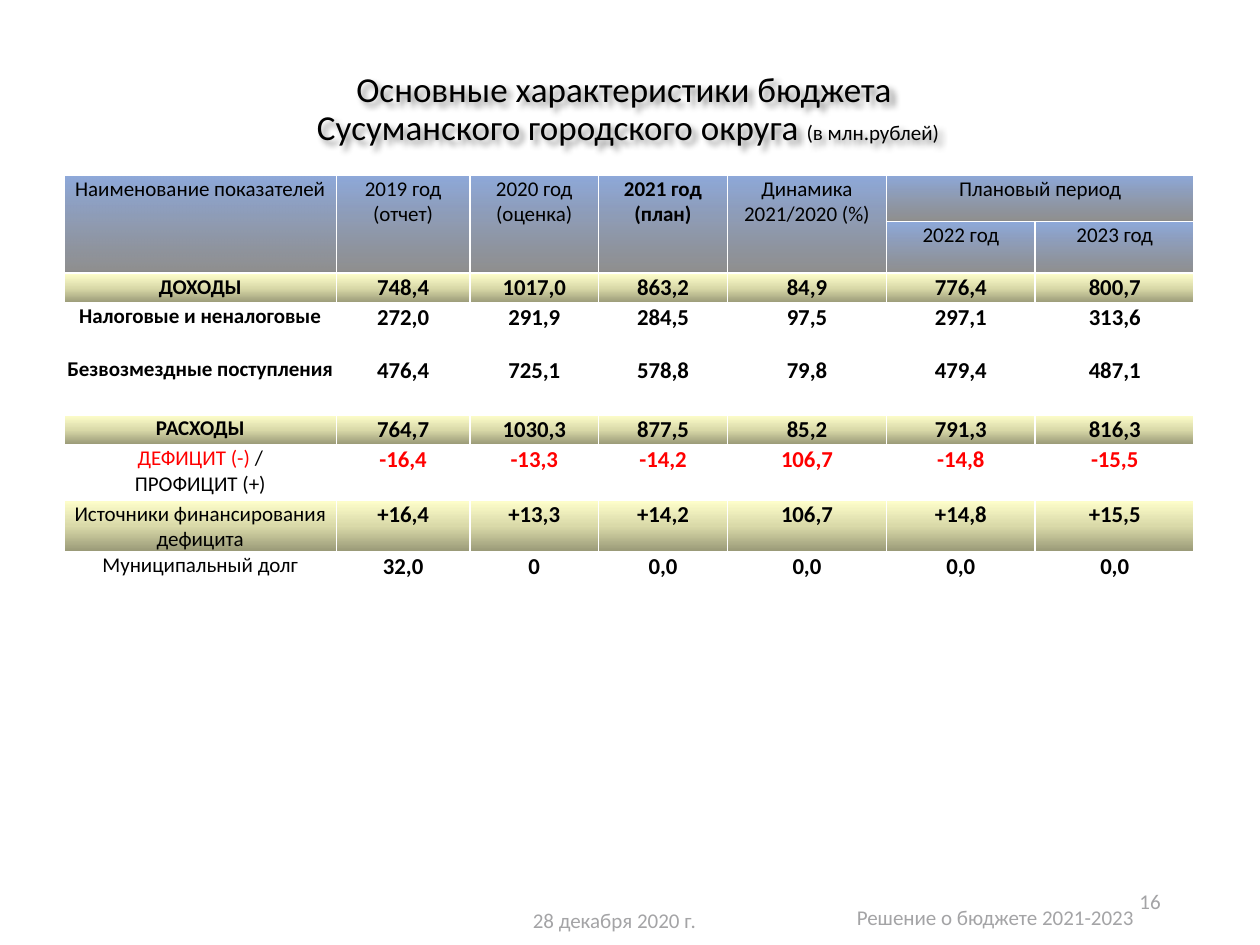
import pptx
import pptx.util
import pptx.dml.color
import pptx.enum.text
import pptx.oxml
import pptx.oxml.ns

Pt = pptx.util.Pt
RGB = pptx.dml.color.RGBColor
PP = pptx.enum.text.PP_ALIGN
NS = pptx.oxml.ns.nsdecls("a")

BLACK = RGB(0, 0, 0)
WHITE = RGB(255, 255, 255)
RED = RGB(255, 0, 0)
GREY = RGB(0xA4, 0xA4, 0xA6)

# Gradients: angle in degrees, then (position %, colour, opacity %)
BLUE_GRAD = (90, [(0, RGB(0x8F, 0xAA, 0xDC), 100),
                  (96, RGB(0x80, 0x80, 0x80), 87),
                  (100, RGB(0x80, 0x80, 0x80), 100)])
YELLOW_GRAD = (270, [(0, RGB(0x99, 0x99, 0x77), 100),
                     (50, RGB(0xDA, 0xDA, 0xA9), 100),
                     (100, RGB(0xFF, 0xFF, 0xCC), 100)])

LABEL = {"size": Pt(12), "bold": False}
BOLD_LABEL = {"size": Pt(12), "bold": True}
VALUE = {"size": Pt(13), "bold": True}


class Deck:
    def __init__(self, width, height, font="Calibri"):
        self.prs = pptx.Presentation()
        self.prs.slide_width, self.prs.slide_height = Pt(width), Pt(height)
        self.font = font
        self.s = self.prs.slides.add_slide(self.prs.slide_layouts[6])

    def run(self, p, text, color=BLACK, **fmt):
        r = p.add_run()
        r.text = text
        r.font.color.rgb = color
        for name, value in {"name": self.font, **fmt}.items():
            setattr(r.font, name, value)

    def paragraphs(self, tf, lines, align, **fmt):
        """Each line is a text or a list of (text, format) runs."""
        for i, line in enumerate(lines):
            p = tf.paragraphs[0] if i == 0 else tf.add_paragraph()
            p.alignment = align
            for text, extra in [(line, {})] if isinstance(line, str) else line:
                self.run(p, text, **{**fmt, **extra})

    def text(self, box, lines, align, **fmt):
        sp = self.s.shapes.add_textbox(*map(Pt, box))
        tf = sp.text_frame
        tf.word_wrap = True
        tf.vertical_anchor = pptx.enum.text.MSO_ANCHOR.MIDDLE
        self.paragraphs(tf, lines, align, **fmt)
        return sp

    def title(self, box, first, second, unit):
        sp = self.text(box, [[(first, {})]], PP.CENTER, size=Pt(20))
        p = sp.text_frame.paragraphs[0]
        p.line_spacing = 0.9
        p.add_line_break()
        self.run(p, second, size=Pt(20))
        self.run(p, unit, size=Pt(12))
        # Soft shadow under the letters
        sp._element.spPr.append(pptx.oxml.parse_xml(
            f'<a:effectLst {NS}><a:outerShdw blurRad="38100" dist="38100" '
            'dir="2700000" algn="tl"><a:srgbClr val="000000">'
            '<a:alpha val="43000"/></a:srgbClr></a:outerShdw></a:effectLst>'))

    def table(self, left, top, widths, heights):
        sp = self.s.shapes.add_table(len(heights), len(widths), Pt(left), Pt(top),
                                     Pt(sum(widths)), Pt(sum(heights)))
        tbl = sp.table
        tbl.first_row = tbl.horz_banding = False
        for col, w in zip(tbl.columns, widths):
            col.width = Pt(w)
        for row, h in zip(tbl.rows, heights):
            row.height = Pt(h)
        return tbl

    def cell(self, c, lines, grad=None, **fmt):
        margins = {"margin_left": 0.7, "margin_right": 0.7,
                   "margin_top": 0.7, "margin_bottom": 0}
        for name, value in margins.items():
            setattr(c, name, Pt(value))
        self.paragraphs(c.text_frame, lines, PP.CENTER, **fmt)
        tcPr = c._tc.get_or_add_tcPr()
        for side in "LRTB":
            tcPr.append(pptx.oxml.parse_xml(
                f'<a:ln{side} {NS} w="{Pt(1)}"><a:solidFill>'
                f'<a:srgbClr val="{WHITE}"/></a:solidFill></a:ln{side}>'))
        if grad is None:
            c.fill.background()
            return
        angle, stops = grad
        gs = "".join(f'<a:gs pos="{pos * 1000}"><a:srgbClr val="{color}">'
                     f'<a:alpha val="{alpha * 1000}"/></a:srgbClr></a:gs>'
                     for pos, color, alpha in stops)
        tcPr.append(pptx.oxml.parse_xml(
            f'<a:gradFill {NS} rotWithShape="1"><a:gsLst>{gs}</a:gsLst>'
            f'<a:lin ang="{angle * 60000}" scaled="0"/></a:gradFill>'))


# Header cells: row, column, lines, format
HEADER = [
    (0, 0, ["Наименование показателей"], LABEL),
    (0, 1, ["2019 год (отчет)"], LABEL),
    (0, 2, ["2020 год", "(оценка)"], LABEL),
    (0, 3, ["2021 год", "(план)"], BOLD_LABEL),
    (0, 4, ["Динамика 2021/2020 (%)"], LABEL),
    (0, 5, ["Плановый период"], LABEL),
    (1, 5, ["2022 год"], LABEL),
    (1, 6, ["2023 год"], LABEL),
]

# Body rows: label lines, label format, values, gradient, value colour
BODY = [
    (["ДОХОДЫ"], BOLD_LABEL,
     "748,4 1017,0 863,2 84,9 776,4 800,7", YELLOW_GRAD, BLACK),
    (["Налоговые и неналоговые"], BOLD_LABEL,
     "272,0 291,9 284,5 97,5 297,1 313,6", None, BLACK),
    (["Безвозмездные поступления"], BOLD_LABEL,
     "476,4 725,1 578,8 79,8 479,4 487,1", None, BLACK),
    (["РАСХОДЫ"], BOLD_LABEL,
     "764,7 1030,3 877,5 85,2 791,3 816,3", YELLOW_GRAD, BLACK),
    ([[("ДЕФИЦИТ (-)", {"color": RED}), (" /", {})], "ПРОФИЦИТ (+)"], LABEL,
     "-16,4 -13,3 -14,2 106,7 -14,8 -15,5", None, RED),
    (["Источники финансирования дефицита"], LABEL,
     "+16,4 +13,3 +14,2 106,7 +14,8 +15,5", YELLOW_GRAD, BLACK),
    (["Муниципальный долг"], LABEL,
     "32,0 0 0,0 0,0 0,0 0,0", None, BLACK),
]


def main():
    d = Deck(720, 540)

    # Title
    d.title((36.7, 37.4, 644.4, 51.1), "Основные характеристики бюджета ",
            "Сусуманского городского округа ", "(в млн.рублей)")

    # Footer
    footer = {"size": Pt(12), "color": GREY}
    d.text((297.4, 511.2, 180, 28.8), ["28 декабря 2020 г."], PP.LEFT, **footer)
    d.text((478.8, 509.8, 180, 28.8), ["Решение о бюджете 2021-2023"],
           PP.CENTER, **footer)
    d.text((508.3, 500.4, 162, 28.8), ["16"], PP.RIGHT, **footer)

    # Budget table
    tbl = d.table(36.7, 100.1, [155.5, 76.3, 73.6, 73.6, 90.9, 85, 90.9],
                  [26.5, 29.5, 17, 30.2, 33.8, 17, 31.7, 29.5, 20.9])
    for col in range(5):
        tbl.cell(0, col).merge(tbl.cell(1, col))
    tbl.cell(0, 5).merge(tbl.cell(0, 6))
    for row, col, lines, fmt in HEADER:
        d.cell(tbl.cell(row, col), lines, BLUE_GRAD, **fmt)
    for row, (label, fmt, values, grad, color) in enumerate(BODY, 2):
        d.cell(tbl.cell(row, 0), label, grad, **fmt)
        for col, value in enumerate(values.split(), 1):
            d.cell(tbl.cell(row, col), [value], grad, color=color, **VALUE)

    d.prs.save("out.pptx")


if __name__ == "__main__":
    main()
